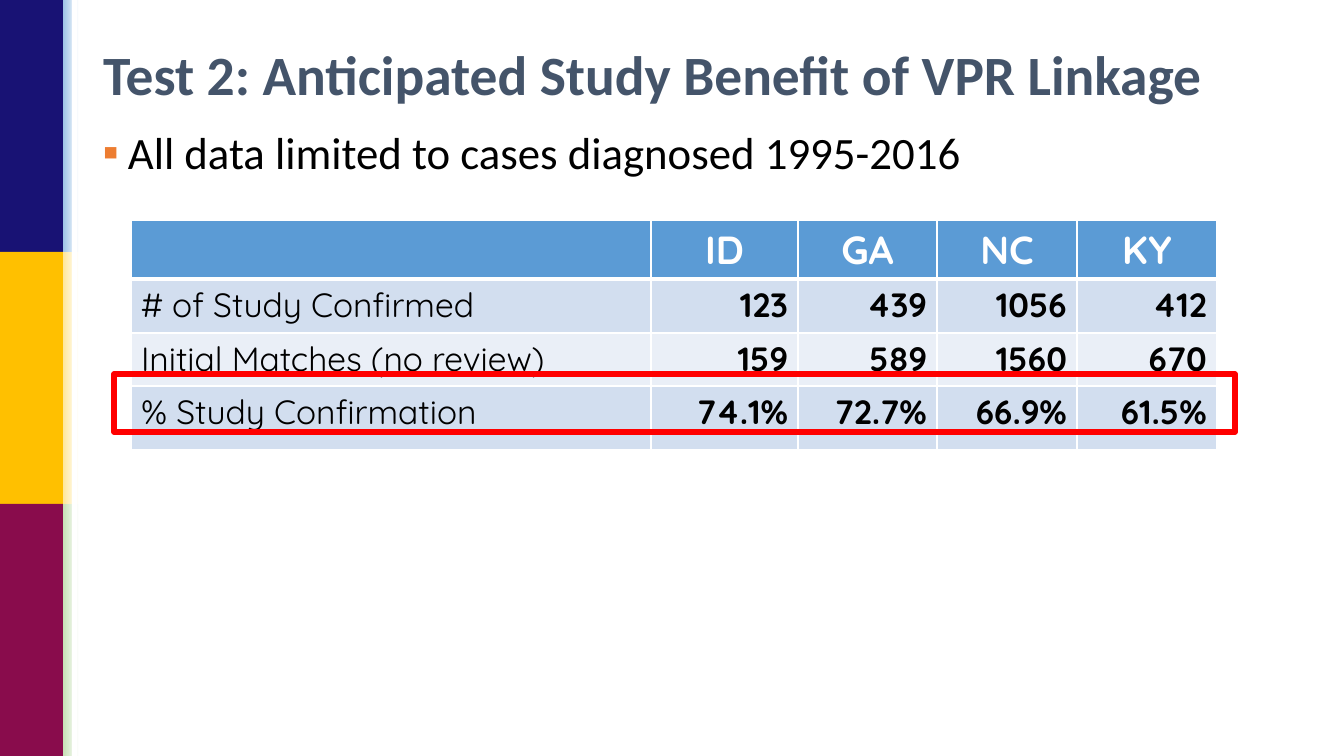
from dataclasses import dataclass

from lxml.etree import SubElement
from pptx import Presentation
from pptx.dml.color import RGBColor
from pptx.enum.shapes import MSO_SHAPE as Preset
from pptx.enum.text import MSO_ANCHOR as Anchor, MSO_AUTO_SIZE as AutoSize, PP_ALIGN as Align
from pptx.oxml import parse_xml
from pptx.oxml.ns import nsdecls, qn
from pptx.util import Pt

EMU_PER_PX = 914400 / 100.8
SLIDE_WIDTH, SLIDE_HEIGHT = 1344, 756


@dataclass(frozen=True)
class Theme:
    text_font: str = "Calibri"
    table_font: str = "Quicksand"
    title_size: float = 39.6
    body_size: int = 32
    header_size: int = 28
    cell_size: int = 24
    title: str = "44546A"
    text: str = "000000"
    white: str = "FFFFFF"
    bullet: str = "ED7D31"
    header: str = "5B9BD5"
    bands: tuple = ("D2DEEF", "EAEFF7")
    highlight: str = "FF0000"
    # Solid colour and start of the fading edge, from top to bottom
    sidebar: tuple = (("181274", "9DC3E6"), ("FFC000", "FFE699"), ("890C4C", "C5E0B4"))


def px(length):
    return round(length * EMU_PER_PX)


def rgb(color):
    return RGBColor.from_string(color)


class SlideBuilder:
    def __init__(self, presentation, theme):
        self.theme = theme
        self.slide = presentation.slides.add_slide(presentation.slide_layouts[5])

    def style(self, paragraph, font_name, size, color, bold=False):
        for run in paragraph.runs:
            font = run.font
            font.name, font.size, font.bold = font_name, Pt(size), bold
            font.color.rgb = rgb(color)

    def title(self, box, text):
        shape = self.slide.shapes.title
        shape.left, shape.top, shape.width, shape.height = map(px, box)
        frame = shape.text_frame
        frame.text = text
        frame.word_wrap, frame.auto_size = True, AutoSize.NONE
        frame.vertical_anchor = Anchor.MIDDLE
        paragraph = frame.paragraphs[0]
        paragraph.alignment, paragraph.line_spacing = Align.LEFT, 0.9
        self.style(paragraph, self.theme.text_font, self.theme.title_size, self.theme.title, True)

    def bullet(self, box, text):
        frame = self.slide.shapes.add_textbox(*map(px, box)).text_frame
        frame.text = text
        frame.word_wrap = True
        paragraph = frame.paragraphs[0]
        paragraph.line_spacing = 0.9
        properties = paragraph._p.get_or_add_pPr()
        properties.set("marL", str(px(25)))
        properties.set("indent", str(px(-25)))
        color = SubElement(properties, qn("a:buClr"))
        SubElement(color, qn("a:srgbClr"), val=self.theme.bullet)
        SubElement(properties, qn("a:buFont"), typeface=self.theme.text_font)
        SubElement(properties, qn("a:buChar"), char="▪")
        self.style(paragraph, self.theme.text_font, self.theme.body_size, self.theme.text)

    def rectangle(self, box, fill=None, fade=None, line=None, line_width=4):
        """Draw a solid, hollow or fill-to-fade rectangle."""
        shape = self.slide.shapes.add_shape(Preset.RECTANGLE, *map(px, box))
        shape.shadow.inherit = False
        if fade:
            shape.fill.gradient()
            shape.fill.gradient_angle = 0
            for stop, color in zip(shape.fill.gradient_stops, (fill, fade)):
                stop.color.rgb = rgb(color)
        elif fill:
            shape.fill.solid()
            shape.fill.fore_color.rgb = rgb(fill)
        else:
            shape.fill.background()
        if line:
            shape.line.color.rgb = rgb(line)
            shape.line.width = Pt(line_width)
        else:
            shape.line.fill.background()

    def sidebar(self, width, fade_width):
        height = SLIDE_HEIGHT // len(self.theme.sidebar)
        for index, (solid, light) in enumerate(self.theme.sidebar):
            top = index * height
            self.rectangle((0, top, width, height), solid)
            self.rectangle((width, top, fade_width, height), light, self.theme.white)
        self.rectangle((72, 0, 5, SLIDE_HEIGHT), self.theme.white)

    def borders(self, cell, top, bottom):
        properties = cell._tc.get_or_add_tcPr()
        widths = {"lnL": 1, "lnR": 1, "lnT": top, "lnB": bottom}
        for index, (side, width) in enumerate(widths.items()):
            properties.insert(index, parse_xml(
                f'<a:{side} {nsdecls("a")} w="{Pt(width)}"><a:solidFill>'
                f'<a:srgbClr val="{self.theme.white}"/></a:solidFill></a:{side}>'))

    def table(self, left, top, widths, heights, rows):
        theme = self.theme
        size = px(sum(widths)), px(sum(heights))
        table = self.slide.shapes.add_table(
            len(rows), len(widths), px(left), px(top), *size).table
        for column, width in zip(table.columns, widths):
            column.width = px(width)
        for row, height in zip(table.rows, heights):
            row.height = px(height)
        for row_index, values in enumerate(rows):
            is_header = row_index == 0
            for column_index, value in enumerate(values):
                cell = table.cell(row_index, column_index)
                cell.text = value
                cell.fill.solid()
                band = theme.bands[(row_index - 1) % 2]
                cell.fill.fore_color.rgb = rgb(theme.header if is_header else band)
                self.borders(cell, 3 if row_index == 1 else 1, 3 if is_header else 1)
                paragraph = cell.text_frame.paragraphs[0]
                if is_header:
                    paragraph.alignment = Align.CENTER
                    self.style(paragraph, theme.table_font, theme.header_size, theme.white, True)
                else:
                    is_value = column_index > 0
                    paragraph.alignment = Align.RIGHT if is_value else Align.LEFT
                    self.style(paragraph, theme.table_font, theme.cell_size, theme.text, is_value)


def main():
    presentation = Presentation()
    presentation.slide_width, presentation.slide_height = px(SLIDE_WIDTH), px(SLIDE_HEIGHT)
    theme = Theme()
    builder = SlideBuilder(presentation, theme)
    builder.sidebar(63, 16)
    builder.table(131, 220, (520, 147, 139, 140, 140), (58, 54, 53, 64), (
        ("", "ID", "GA", "NC", "KY"),
        ("# of Study Confirmed", "123", "439", "1056", "412"),
        ("Initial Matches (no review)", "159", "589", "1560", "670"),
        ("% Study Confirmation", "74.1%", "72.7%", "66.9%", "61.5%"),
    ))
    builder.title((93, 35, 1176, 86), "Test 2: Anticipated Study Benefit of VPR Linkage")
    builder.bullet((93, 126, 1251, 530), "All data limited to cases diagnosed 1995-2016")
    builder.rectangle((114, 374, 1121, 58), line=theme.highlight)
    presentation.save("out.pptx")


if __name__ == "__main__":
    main()
